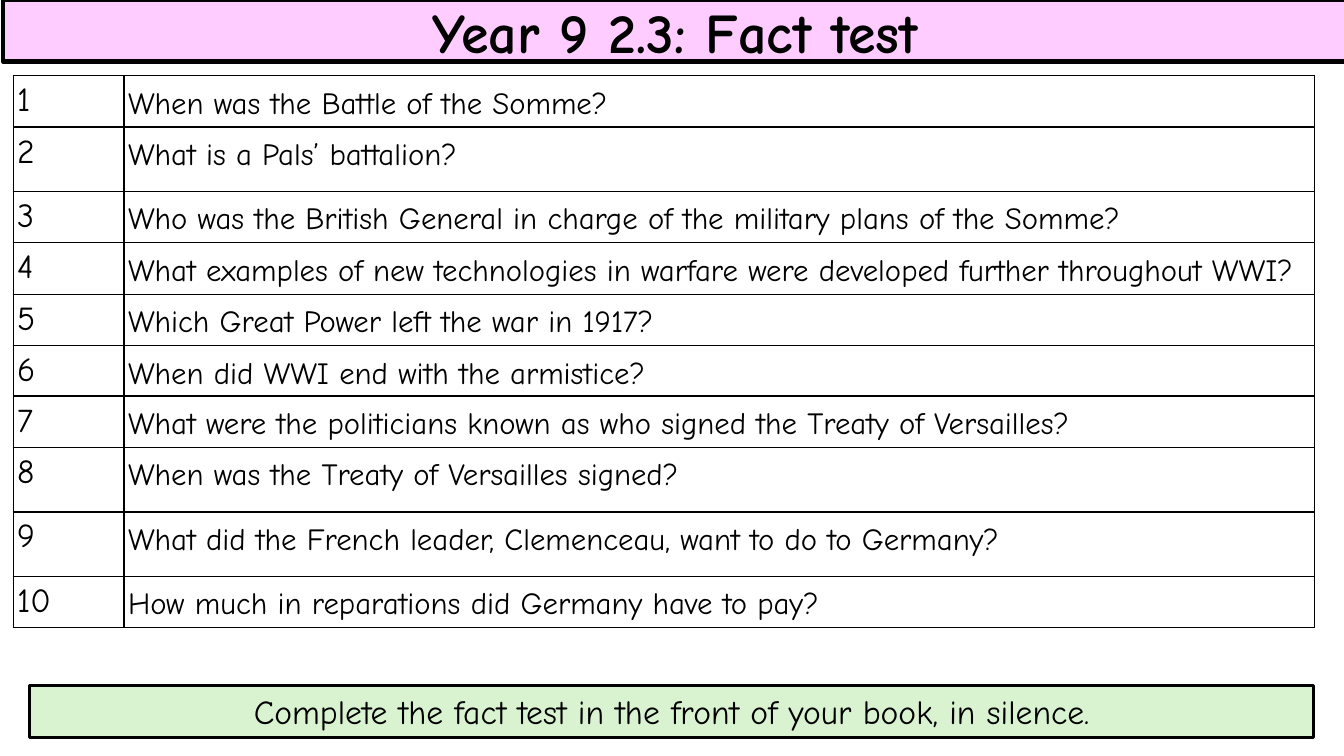
import pptx
import pptx.util
import pptx.dml.color
import pptx.enum.shapes
import pptx.enum.text
import pptx.oxml.ns
import lxml.etree

TITLE = "Year 9 2.3: Fact test"
INSTRUCTION = "Complete the fact test in the front of your book, in silence."
QUESTIONS = [
    "When was the Battle of the Somme?",
    "What is a Pals’ battalion?",
    "Who was the British General in charge of the military plans of the Somme?",
    "What examples of new technologies in warfare were developed further throughout WWI?",
    "Which Great Power left the war in 1917?",
    "When did WWI end with the armistice?",
    "What were the politicians known as who signed the Treaty of Versailles?",
    "When was the Treaty of Versailles signed?",
    "What did the French leader, Clemenceau, want to do to Germany?",
    "How much in reparations did Germany have to pay?",
]
ROW_HEIGHT = 0.51
SPECIAL_HEIGHTS = {2: 0.64, 6: 0.5, 8: 0.64, 9: 0.64}
COLUMNS = (1.1, 11.81)
WIDTH, HEIGHT = 13.33, 7.5
FONT = "Comic Neue"

BLACK = pptx.dml.color.RGBColor(0x00, 0x00, 0x00)
WHITE = pptx.dml.color.RGBColor(0xFF, 0xFF, 0xFF)
PINK = pptx.dml.color.RGBColor(0xFF, 0xCC, 0xFF)
GREEN = pptx.dml.color.RGBColor(0xD9, 0xF2, 0xD0)

CENTER = pptx.enum.text.PP_ALIGN.CENTER
MIDDLE = pptx.enum.text.MSO_ANCHOR.MIDDLE
TOP = pptx.enum.text.MSO_ANCHOR.TOP
inches = pptx.util.Inches


def write(tf, text, size, bold=False, align=None, spacing=None, after=None):
    p = tf.paragraphs[0]
    p.alignment = align
    p.line_spacing = spacing
    if after is not None:
        p.space_after = pptx.util.Pt(after)
    r = p.add_run()
    r.text = text
    r.font.name = FONT
    r.font.size = pptx.util.Pt(size)
    r.font.bold = bold
    r.font.color.rgb = BLACK


def style_box(sp, left, top, width, height, fill, line, anchor):
    sp.left, sp.top, sp.width, sp.height = map(inches, (left, top, width, height))
    sp.fill.solid()
    sp.fill.fore_color.rgb = fill
    sp.line.color.rgb = BLACK
    sp.line.width = pptx.util.Pt(line)
    tf = sp.text_frame
    tf.word_wrap = True
    tf.auto_size = pptx.enum.text.MSO_AUTO_SIZE.NONE
    tf.vertical_anchor = anchor


def style_cell(cell, inset):
    cell.margin_left = cell.margin_right = inches(0.04)
    cell.margin_top = cell.margin_bottom = inches(inset)
    props = cell._tc.get_or_add_tcPr()
    for side in ("lnL", "lnR", "lnT", "lnB"):
        ln = lxml.etree.SubElement(props, pptx.oxml.ns.qn("a:" + side), w=str(pptx.util.Pt(1)))
        fill = lxml.etree.SubElement(ln, pptx.oxml.ns.qn("a:solidFill"))
        lxml.etree.SubElement(fill, pptx.oxml.ns.qn("a:srgbClr"), val=str(BLACK))
    cell.fill.solid()
    cell.fill.fore_color.rgb = WHITE


def add_questions(slide):
    heights = [SPECIAL_HEIGHTS.get(n, ROW_HEIGHT) for n in range(1, len(QUESTIONS) + 1)]
    frame = slide.shapes.add_table(len(QUESTIONS), len(COLUMNS), inches(0.13), inches(0.75),
                                   inches(sum(COLUMNS)), inches(sum(heights)))
    table = frame.table
    table.first_row = table.horz_banding = False
    for column, width in zip(table.columns, COLUMNS):
        column.width = inches(width)
    for i, (question, height) in enumerate(zip(QUESTIONS, heights)):
        table.rows[i].height = inches(height)
        number, prompt = table.cell(i, 0), table.cell(i, 1)
        style_cell(number, 0)
        style_cell(prompt, 0.04)
        write(number.text_frame, str(i + 1), 24, spacing=1.15, after=10)
        write(prompt.text_frame, question, 22, spacing=1.19, after=6)


def main():
    prs = pptx.Presentation()
    prs.slide_width, prs.slide_height = inches(WIDTH), inches(HEIGHT)
    slide = prs.slides.add_slide(prs.slide_layouts[5])
    title = slide.shapes.title
    style_box(title, 0.03, 0, WIDTH, 0.61, PINK, 3, MIDDLE)
    write(title.text_frame, TITLE, 40, bold=True, align=CENTER)
    add_questions(slide)
    sp = slide.shapes.add_shape(pptx.enum.shapes.MSO_SHAPE.RECTANGLE, 0, 0, 0, 0)
    sp.shadow.inherit = False
    style_box(sp, 0.29, 6.8, 12.74, 0.52, GREEN, 2.25, TOP)
    write(sp.text_frame, INSTRUCTION, 24, align=CENTER)
    prs.save("out.pptx")


if __name__ == "__main__":
    main()
